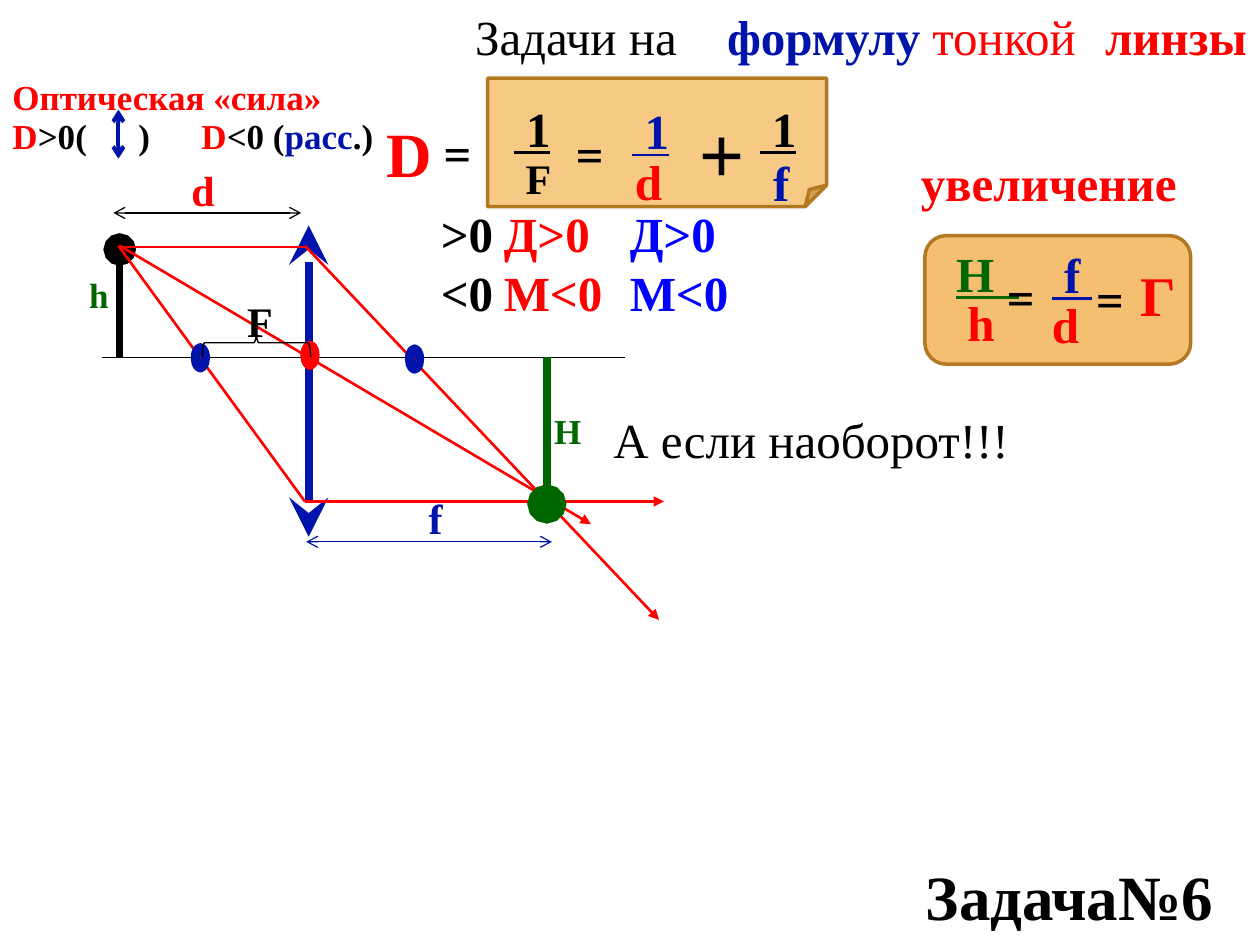
from typing import NamedTuple

from lxml import etree
from pptx import Presentation
from pptx.dml.color import RGBColor
from pptx.enum.shapes import MSO_CONNECTOR, MSO_SHAPE
from pptx.enum.text import MSO_ANCHOR, MSO_AUTO_SIZE, PP_ALIGN
from pptx.oxml.ns import qn
from pptx.util import Emu, Inches, Pt

STRAIGHT = MSO_CONNECTOR.STRAIGHT
OVAL = MSO_SHAPE.OVAL
ROUNDED = MSO_SHAPE.ROUNDED_RECTANGLE
FOLDED = MSO_SHAPE.FOLDED_CORNER
BRACE = MSO_SHAPE.RIGHT_BRACE
TOP = MSO_ANCHOR.TOP
MIDDLE = MSO_ANCHOR.MIDDLE
LEFT = PP_ALIGN.LEFT
GROW = MSO_AUTO_SIZE.SHAPE_TO_FIT_TEXT
FIXED = MSO_AUTO_SIZE.NONE

COLUMNS, ROWS = 100, 75
SLIDE_WIDTH, SLIDE_HEIGHT = Inches(10), Inches(7.5)
SERIF = "Times New Roman"
COLORS = {
    "black": "000000",
    "red": "FF0000",
    "navy": "0014AC",
    "blue": "0000FF",
    "green": "006600",
    "amber": "F0A22E",
    "brown": "B27822",
}


class Box(NamedTuple):
    column: float
    row: float
    columns: float
    rows: float


class Run(NamedTuple):
    text: str
    color: str = "black"
    bold: bool = True


class Label(NamedTuple):
    text: str
    box: Box
    size: float
    color: str = "black"
    bold: bool = True
    underline: bool = False
    font: str = SERIF


class Line(NamedTuple):
    start: tuple[float, float]
    end: tuple[float, float]
    color: str
    width: float
    head: str = ""
    tail: str = ""


def across(columns: float) -> Emu:
    return Emu(round(SLIDE_WIDTH * columns / COLUMNS))


def down(rows: float) -> Emu:
    return Emu(round(SLIDE_HEIGHT * rows / ROWS))


def place(box: Box) -> tuple[Emu, Emu, Emu, Emu]:
    return across(box.column), down(box.row), across(box.columns), down(box.rows)


def rgb(name: str) -> RGBColor:
    return RGBColor.from_string(COLORS[name])


def write_text(shape, lines: list[list[Run]], *, size: float, font: str = SERIF,
               underline: bool = False, anchor=TOP, auto_size=GROW,
               indent: float = 0, tabs: tuple[float, ...] = ()) -> None:
    frame = shape.text_frame
    frame.word_wrap = True
    frame.auto_size = auto_size
    frame.vertical_anchor = anchor
    for index, runs in enumerate(lines):
        paragraph = frame.add_paragraph() if index else frame.paragraphs[0]
        paragraph.alignment = LEFT
        if tabs:
            properties = paragraph._p.get_or_add_pPr()
            properties.set("marL", str(across(indent)))
            properties.set("indent", "0")
            tab_list = etree.SubElement(properties, qn("a:tabLst"))
            for column in tabs:
                etree.SubElement(tab_list, qn("a:tab"), pos=str(across(column)), algn="l")
        for part in runs:
            run = paragraph.add_run()
            run.text = part.text
            run.font.size = Pt(size)
            run.font.name = font
            run.font.bold = part.bold
            run.font.underline = underline
            run.font.color.rgb = rgb(part.color)


def add_text(container, box: Box, lines: list[list[Run]], **text_format) -> None:
    write_text(container.add_textbox(*place(box)), lines, **text_format)


def add_label(container, label: Label) -> None:
    add_text(container, label.box, [[Run(label.text, label.color, label.bold)]],
             size=label.size, font=label.font, underline=label.underline)


def add_line(container, line: Line) -> None:
    connector = container.add_connector(
        STRAIGHT, across(line.start[0]), down(line.start[1]),
        across(line.end[0]), down(line.end[1]))
    connector.line.color.rgb = rgb(line.color)
    connector.line.width = Pt(line.width)
    outline = connector.line._get_or_add_ln()
    extent = "lg" if line.width > 3 else "med"
    for tag, kind in (("a:headEnd", line.head), ("a:tailEnd", line.tail)):
        if kind:
            etree.SubElement(outline, qn(tag), type=kind, w=extent, len=extent)
    etree.SubElement(connector._element.spPr, qn("a:effectLst"))


def add_figure(container, kind, box: Box, outline: str, width: float,
               fill: str = "", opacity: int = 100):
    shape = container.add_shape(kind, *place(box))
    shape.shadow.inherit = False
    shape.line.color.rgb = rgb(outline)
    shape.line.width = Pt(width)
    if fill:
        shape.fill.solid()
        shape.fill.fore_color.rgb = rgb(fill)
        color = shape._element.spPr.find(qn("a:solidFill"))[0]
        etree.SubElement(color, qn("a:alpha"), val=str(opacity * 1000))
    else:
        shape.fill.background()
    return shape


def sign(text: str, column: float, row: float, size: float = 32, font: str = "Calibri") -> Label:
    return Label(text, Box(column, row, 6.4, 3.6), size, bold=False, font=font)


def fraction(numerator: str, top: Box, top_color: str,
             denominator: str, bottom: Box, bottom_color: str, size: float = 28) -> list[Label]:
    return [Label(numerator, top, 28, top_color, underline=True),
            Label(denominator, bottom, size, bottom_color)]


LINES = [
    Line((24.5, 17.9), (24.5, 42.6), "navy", 4.5, "stealth", "stealth"),
    Line((8.1, 28.4), (49.6, 28.4), "black", 0.75),
    Line((9.5, 28.3), (9.5, 19.8), "black", 3.75, tail="oval"),
    Line((24.2, 19.5), (52.3, 49.2), "red", 1.5, tail="triangle"),
    Line((9.5, 19.5), (46.9, 41.6), "red", 1.5, tail="triangle"),
    Line((24.2, 39.8), (52.7, 39.8), "red", 1.5, tail="triangle"),
    Line((9.4, 19.5), (24.2, 39.8), "red", 1.5),
    Line((9, 16.9), (23.9, 16.9), "black", 0.75, "arrow", "arrow"),
    Line((24.3, 43), (43.8, 43), "navy", 0.75, "arrow", "arrow"),
    Line((9.4, 19.6), (24.3, 19.6), "red", 1.5),
    Line((43.4, 28.3), (43.4, 40), "green", 4.5, tail="oval"),
]

FOCAL_POINTS = [(15.5, 27.6, "navy"), (32.5, 27.7, "navy"), (24.2, 27.4, "red")]

DIAGRAM_LABELS = [
    Label("d", Box(14.2, 12.6, 5.5, 5), 24, "red"),
    Label(" f", Box(32.2, 38.6, 5.5, 5), 24, "navy"),
    Label("H", Box(43, 32, 3.9, 4.4), 20, "green"),
    Label("h", Box(6.1, 21.2, 3.9, 4.4), 20, "green"),
    Label(" F", Box(17.8, 23, 5.5, 5), 24),
]

MAGNIFICATION = [
    *fraction("H  ", Box(74.9, 18.8, 7, 5.7), "green", "h", Box(75.8, 22.7, 4.7, 5.5), "red"),
    sign("=", 78.9, 20.3),
    *fraction(" f ", Box(82.5, 18.9, 5.5, 5.7), "navy", "d", Box(82.5, 22.9, 5.5, 5.7), "red"),
    sign("=", 86, 20.4),
    Label("Г", Box(89.5, 20.2, 3.9, 6.4), 32, "red"),
]

LENS_POWER = [
    Label("D", Box(29.7, 8.6, 5.5, 7.1), 36, "red"),
    sign("=", 34.2, 8.8),
    *fraction(" 1", Box(39.8, 7.3, 5.5, 5.7), "black", " F", Box(39.9, 11.6, 6.3, 5.5), "black", 24),
    sign("=", 44.7, 8.9),
    *fraction(" 1", Box(49.2, 7.5, 5.5, 5.7), "navy", "d", Box(49.4, 11.5, 5.5, 5.7), "red"),
    sign("+", 54.5, 7.9, 44, "Arial"),
    *fraction(" 1", Box(59.3, 7.3, 5.5, 5.7), "black", " f", Box(59.4, 11.6, 6.3, 5.5), "navy"),
]

CAPTIONS = [
    Label("Оптическая «сила»", Box(0, 5.5, 29.7, 4.4), 20, "red"),
    Label("увеличение", Box(72.1, 11.6, 23.4, 5.7), 28, "red"),
    Label("А если наоборот!!!", Box(47.7, 32, 35.2, 5.7), 28, bold=False),
    Label("Задача№6", Box(72.5, 67.6, 29.7, 7.1), 36),
]


def main() -> None:
    presentation = Presentation()
    presentation.slide_width, presentation.slide_height = SLIDE_WIDTH, SLIDE_HEIGHT
    slide = presentation.slides.add_slide(presentation.slide_layouts[5])
    shapes = slide.shapes

    title = shapes.title
    title.left, title.top, title.width, title.height = place(Box(36.7, 0, 63.3, 5.7))
    write_text(title, [[Run("Задачи на\t", bold=False), Run("формулу", "navy"),
                        Run(" тонкой\t", "red", False), Run("линзы", "red")]],
               size=28, auto_size=FIXED, tabs=(17.9, 49.5))

    add_figure(shapes, ROUNDED, Box(73.4, 18.7, 21.1, 10.2), "brown", 2, "amber", 68)
    add_figure(shapes, FOLDED, Box(38.7, 6.2, 26.9, 10.2), "brown", 2, "amber", 58)
    for line in LINES:
        add_line(shapes, line)
    for column, row, color in FOCAL_POINTS:
        add_figure(shapes, OVAL, Box(column, row, 0.8, 1.6), color, 5.25, "red")
    brace = add_figure(shapes, BRACE, Box(19.2, 22.9, 2.3, 8.6), "black", 0.79)
    brace.rotation = 270
    brace.adjustments[0] = 0.08
    for label in DIAGRAM_LABELS + MAGNIFICATION + LENS_POWER + CAPTIONS:
        add_label(shapes, label)

    lens_sign = shapes.add_group_shape().shapes
    add_text(lens_sign, Box(0, 8.6, 32.8, 4.4),
             [[Run("D", "red"), Run(">0\t(\t)\t"), Run("D", "red"), Run("<0 ("),
               Run("расс", "navy"), Run(".)")]], size=20, tabs=(6.4, 10, 13.8))
    add_line(lens_sign, Line((9.4, 8.7), (9.4, 12.6), "navy", 2.25, "arrow", "arrow"))

    sign_rows = [[Run(f"{first}{relation}0{gap}", color) for first, color, gap in
                  (("", "black", "\t"), (letter, "red", "\t"), (letter, "blue", ""))]
                 for letter, relation in (("Д", ">"), ("М", "<"))]
    add_text(shapes, Box(32, 15.6, 32, 10.4), sign_rows, size=28, anchor=MIDDLE,
             indent=2, tabs=(10, 20.7))

    presentation.save("out.pptx")


if __name__ == "__main__":
    main()
